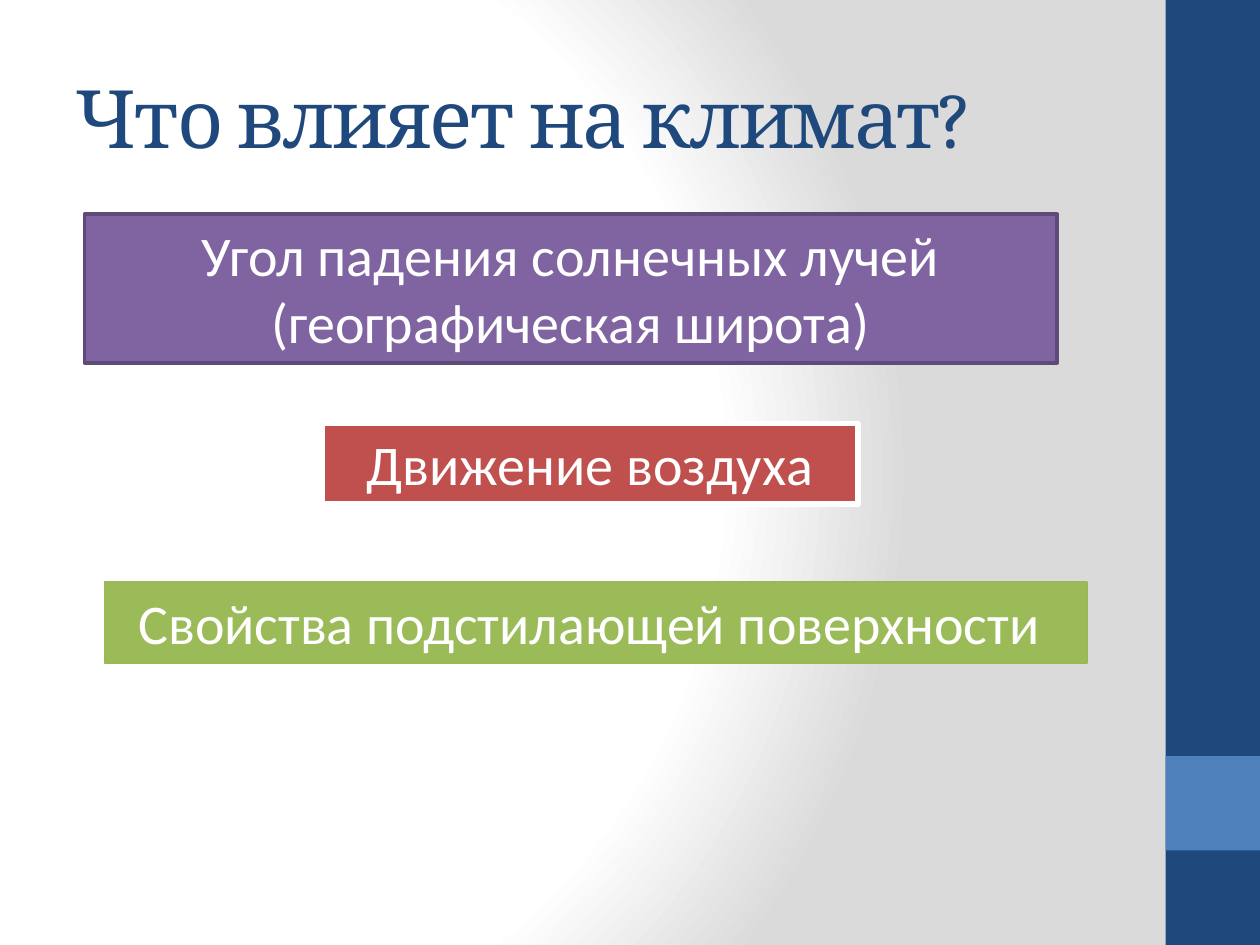
import pptx
import pptx.dml.color
import pptx.enum.shapes
import pptx.enum.text
import pptx.oxml
import pptx.oxml.ns
import pptx.util

Inches, Pt = pptx.util.Inches, pptx.util.Pt
ALIGN = pptx.enum.text.PP_ALIGN
ANCHOR = pptx.enum.text.MSO_ANCHOR
FIT = pptx.enum.text.MSO_AUTO_SIZE
TITLE_ONLY = 5

COLORS = {
    "white": "FFFFFF", "gray": "DADADA", "navy": "1F497D", "blue": "4F81BD",
    "purple": "8064A2", "dark purple": "5F4A78", "red": "C0504D",
    "green": "9BBB59", "dark green": "98B955",
}


def color(name):
    return pptx.dml.color.RGBColor.from_string(COLORS[name])


def set_values(target, values):
    for name, value in values.items():
        setattr(target, name, value)


class SlideBuilder:
    title_font = {"name": "Cambria", "size": Pt(46), "bold": False}
    box_font = {"name": "Calibri", "size": Pt(32)}

    def __init__(self, presentation):
        self.slide = presentation.slides.add_slide(
            presentation.slide_layouts[TITLE_ONLY])

    def background(self, stops):
        """Radial gradient centred towards the left edge."""
        fill = self.slide.background.fill
        fill.solid()
        stop_xml = "".join(
            f'<a:gs pos="{percent * 1000}"><a:srgbClr val="{COLORS[name]}"/></a:gs>'
            for percent, name in stops)
        gradient = pptx.oxml.parse_xml(
            f'<a:gradFill {pptx.oxml.ns.nsdecls("a")} rotWithShape="1">'
            f'<a:gsLst>{stop_xml}</a:gsLst><a:path path="circle">'
            '<a:fillToRect l="20000" t="50000" r="100000" b="50000"/>'
            '</a:path></a:gradFill>')
        solid = next(self.slide.element.iter(pptx.oxml.ns.qn("a:solidFill")))
        solid.getparent().replace(solid, gradient)

    def place(self, shape, position):
        names = ("left", "top", "width", "height")
        set_values(shape, dict(zip(names, map(Inches, position))))

    def add_text(self, shape, text, font, font_color, alignment, frame_values):
        frame = shape.text_frame
        set_values(frame, {"word_wrap": True, **frame_values})
        paragraph = frame.paragraphs[0]
        paragraph.alignment = alignment
        run = paragraph.add_run()
        run.text = text
        set_values(run.font, font)
        run.font.color.rgb = color(font_color)
        return run

    def title(self, text, position):
        shape = self.slide.shapes.title
        self.place(shape, position)
        run = self.add_text(shape, text, self.title_font, "navy", ALIGN.LEFT,
                            {"vertical_anchor": ANCHOR.MIDDLE,
                             "auto_size": FIT.NONE})
        run.font._element.set("spc", "-100")

    def rectangle(self, position, fill, line=None, line_width=0):
        shape = self.slide.shapes.add_shape(
            pptx.enum.shapes.MSO_SHAPE.RECTANGLE, *map(Inches, position))
        shape.shadow.inherit = False
        shape.fill.solid()
        shape.fill.fore_color.rgb = color(fill)
        if line:
            shape.line.color.rgb = color(line)
            shape.line.width = Pt(line_width)
        else:
            shape.line.fill.background()
        return shape

    def box(self, text, position, fill, line, line_width):
        shape = self.rectangle(position, fill, line, line_width)
        self.add_text(shape, text, self.box_font, "white", ALIGN.CENTER,
                      {"vertical_anchor": ANCHOR.TOP,
                       "auto_size": FIT.SHAPE_TO_FIT_TEXT})


def main():
    presentation = pptx.Presentation()
    set_values(presentation, {"slide_width": Inches(10), "slide_height": Inches(7.5)})
    builder = SlideBuilder(presentation)

    # Background and side band
    builder.background([(0, "white"), (75, "white"), (100, "gray")])
    builder.rectangle((9.25, 0, 0.75, 7.5), "navy")
    builder.rectangle((9.25, 6, 0.75, 0.75), "blue")

    # Title
    builder.title("Что влияет на климат?", (0.5, 0.3, 8.33, 1.25))

    # Climate factors
    factors = [
        ("Угол падения солнечных лучей (географическая широта)",
         (0.67, 1.7, 7.72, 1.18), "purple", "dark purple", 2),
        ("Движение воздуха", (2.56, 3.36, 4.25, 0.64), "red", "white", 3),
        ("Свойства подстилающей поверхности ",
         (0.83, 4.62, 7.8, 0.64), "green", "dark green", 1),
    ]
    for factor in factors:
        builder.box(*factor)

    presentation.save("out.pptx")


if __name__ == "__main__":
    main()
